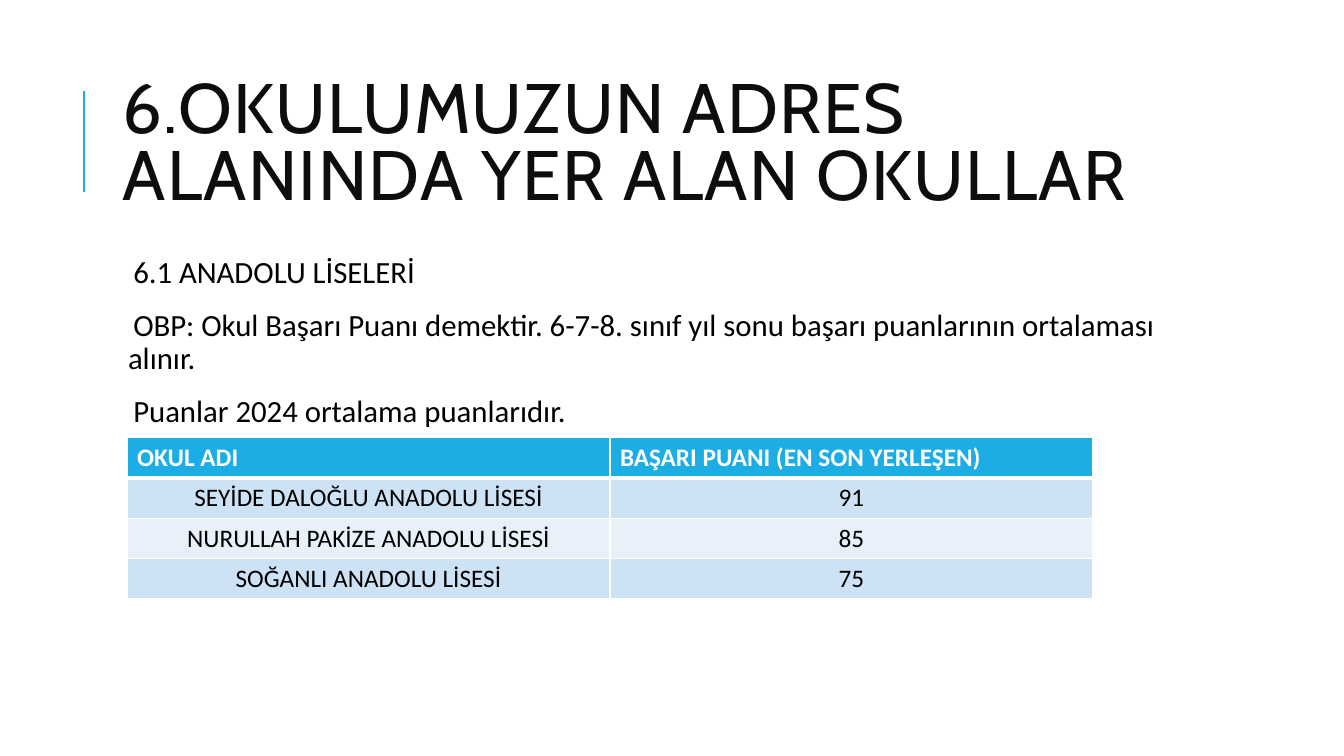
from dataclasses import dataclass
from lxml.etree import SubElement
from pptx import Presentation
from pptx.dml.color import RGBColor
from pptx.enum.shapes import MSO_CONNECTOR
from pptx.enum.text import MSO_ANCHOR, PP_ALIGN
from pptx.oxml import parse_xml
from pptx.oxml.ns import nsdecls, qn
from pptx.util import Inches, Pt

# Content
TITLE = "6.OKULUMUZUN ADRES ALANINDA YER ALAN OKULLAR"
BODY = [
    "6.1 ANADOLU LİSELERİ",
    "OBP: Okul Başarı Puanı demektir. 6-7-8. sınıf yıl sonu başarı puanlarının ortalaması alınır.",
    "Puanlar 2024 ortalama puanlarıdır.",
]
SCHOOLS = [
    ("OKUL ADI", "BAŞARI PUANI (EN SON YERLEŞEN)"),
    ("SEYİDE DALOĞLU ANADOLU LİSESİ", "91"),
    ("NURULLAH PAKİZE ANADOLU LİSESİ", "85"),
    ("SOĞANLI ANADOLU LİSESİ", "75"),
]


@dataclass(frozen=True)
class Theme:
    accent: str = "1CADE4"
    title: str = "0D0D0D"
    text: str = "000000"
    white: str = "FFFFFF"
    bands: tuple = ("E8F1FA", "CDE3F5")
    head_font: str = "Cabin"
    body_font: str = "Calibri"
    title_size: int = 50
    body_size: int = 22
    table_size: int = 18


T = Theme()

# Layout in inches
W, H = 13.33, 7.5
LEFT, TEXT_W = 1.12, 10.63
RULE_X, RULE_TOP, RULE_BOTTOM = 0.83, 0.9, 1.9
TABLE_X, TABLE_Y, COL_W, ROW_H = 1.26, 4.34, 4.79, 0.4
INSET = 0.05


def write(p, text, size, color, font=T.body_font, bold=False, align=None,
          line=None, before=None, after=None, spacing=None, hang=None):
    p.alignment, p.line_spacing = align, line
    if before is not None:
        p.space_before, p.space_after = Pt(before), Pt(after)
    r = p.add_run()
    r.text = text
    r.font.size, r.font.name, r.font.bold = Pt(size), font, bold
    r.font.color.rgb = RGBColor.from_string(color)
    if spacing:
        r.font._element.set("spc", str(spacing * 100))
    if hang:
        pPr = p._p.get_or_add_pPr()
        pPr.set("marL", str(Inches(hang)))
        pPr.set("indent", str(-Inches(hang)))
        SubElement(pPr, qn("a:buChar")).set("char", " ")


def add_text_frame(s, top, height, anchor):
    tf = s.shapes.add_textbox(Inches(LEFT), Inches(top), Inches(TEXT_W), Inches(height)).text_frame
    tf.word_wrap, tf.vertical_anchor = True, anchor
    return tf


def set_borders(cell, **widths):
    tcPr = cell._tc.get_or_add_tcPr()
    for i, side in enumerate("LRTB"):
        tcPr.insert(i, parse_xml(
            f'<a:ln{side} {nsdecls("a")} w="{Pt(widths.get(side, 1))}"><a:solidFill>'
            f'<a:srgbClr val="{T.white}"/></a:solidFill></a:ln{side}>'))


prs = Presentation()
prs.slide_width, prs.slide_height = Inches(W), Inches(H)
s = prs.slides.add_slide(prs.slide_layouts[6])

# Accent rule beside the title
rule = s.shapes.add_connector(MSO_CONNECTOR.STRAIGHT, Inches(RULE_X), Inches(RULE_BOTTOM),
                              Inches(RULE_X), Inches(RULE_TOP))
rule.line.color.rgb = RGBColor.from_string(T.accent)
rule.line.width = Pt(1.5)
SubElement(rule._element.spPr, qn("a:effectLst"))

# Title
tf = add_text_frame(s, 0.64, 1.64, MSO_ANCHOR.MIDDLE)
write(tf.paragraphs[0], TITLE, T.title_size, T.title, font=T.head_font, line=0.8, spacing=1)

# Body
tf = add_text_frame(s, 2.5, 4.4, MSO_ANCHOR.TOP)
tf.margin_left = tf.margin_right = tf.margin_top = tf.margin_bottom = Inches(INSET)
for i, text in enumerate(BODY):
    p = tf.add_paragraph() if i else tf.paragraphs[0]
    write(p, text, T.body_size, T.text, line=0.9, before=12, after=2, hang=0.1)

# School table
rows, cols = len(SCHOOLS), len(SCHOOLS[0])
table = s.shapes.add_table(rows, cols, Inches(TABLE_X), Inches(TABLE_Y),
                           Inches(COL_W * cols), Inches(ROW_H * rows)).table
for y, row in enumerate(SCHOOLS):
    header = y == 0
    for x, text in enumerate(row):
        cell = table.cell(y, x)
        cell.fill.solid()
        cell.fill.fore_color.rgb = RGBColor.from_string(T.accent if header else T.bands[y % 2])
        set_borders(cell, T=3 if y == 1 else 1, B=3 if header else 1)
        write(cell.text_frame.paragraphs[0], text, T.table_size,
              T.white if header else T.text, bold=header,
              align=PP_ALIGN.LEFT if header else PP_ALIGN.CENTER)

prs.save("out.pptx")
